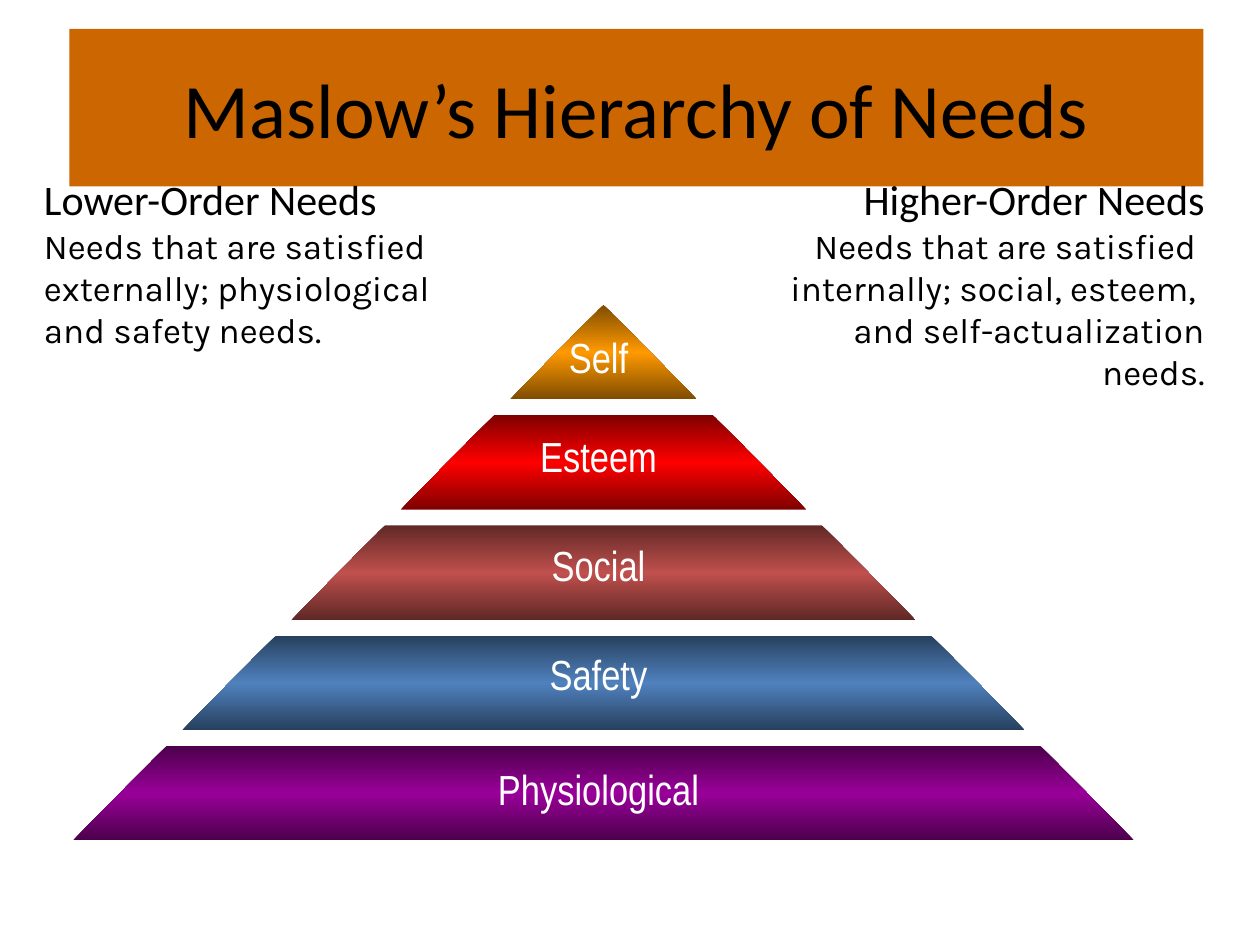
from copy import deepcopy
from dataclasses import dataclass

from pptx import Presentation
from pptx.dml.color import RGBColor
from pptx.enum.text import MSO_ANCHOR, MSO_AUTO_SIZE, PP_ALIGN
from pptx.oxml.ns import qn
from pptx.util import Inches, Pt

LEFT, CENTER, RIGHT = PP_ALIGN.LEFT, PP_ALIGN.CENTER, PP_ALIGN.RIGHT
MIDDLE = MSO_ANCHOR.MIDDLE
NO_FIT, GROW = MSO_AUTO_SIZE.NONE, MSO_AUTO_SIZE.SHAPE_TO_FIT_TEXT


@dataclass(frozen=True)
class Theme:
    banner: str = "CC6600"
    ink: str = "000000"
    label: str = "FFFFFF"
    tiers: tuple = ("FF9900", "FF0000", "C0504D", "4F81BD", "990099")
    main_font: str = "Calibri"
    note_font: str = "Karla"
    label_font: str = "Arial Narrow"
    title_size: int = 44
    heading_size: int = 24
    note_size: int = 20


THEME = Theme()

# Need and line spacing of its label, from the top tier down
NEEDS = [("Self", 1), ("Esteem", 1.8), ("Social", 2), ("Safety", 2), ("Physiological", 2.1)]
LOWER = ("Lower-Order Needs\nNeeds that are satisfied externally; physiological \n"
         "and safety needs.")
HIGHER = ("Higher-Order Needs\nNeeds that are satisfied \ninternally; social, esteem, \n"
          "and self-actualization\n needs.")


def place(shape, box):
    shape.left, shape.top, shape.width, shape.height = map(Inches, box)


def style(r, font, size, color):
    r.font.name, r.font.size = font, Pt(size)
    r.font.color.rgb = RGBColor.from_string(color)


def add_title(s, box, text):
    title = s.shapes.title
    place(title, box)
    title.fill.solid()
    title.fill.fore_color.rgb = RGBColor.from_string(THEME.banner)
    tf = title.text_frame
    tf.text = text
    tf.vertical_anchor, tf.auto_size = MIDDLE, NO_FIT
    p = tf.paragraphs[0]
    p.alignment = CENTER
    style(p.runs[0], THEME.main_font, THEME.title_size, THEME.ink)


def add_note(s, box, text, align):
    """Heading on the first line, explanation on the lines below."""
    tf = s.shapes.add_textbox(*map(Inches, box)).text_frame
    tf.word_wrap, tf.auto_size = True, GROW
    p = tf.paragraphs[0]
    p.text = text
    p.alignment = align
    heading, *lines = p.runs
    style(heading, THEME.main_font, THEME.heading_size, THEME.ink)
    for r in lines:
        style(r, THEME.note_font, THEME.note_size, THEME.ink)


def shade_tier(sp, color):
    """Vertical gradient from half brightness to full and back."""
    bright = RGBColor.from_string(color)
    dark = RGBColor(*(c // 2 for c in bright))
    sp.fill.gradient()
    sp.fill.gradient_angle = 90
    stop_list = sp._element.spPr.find(qn("a:gradFill")).find(qn("a:gsLst"))
    stop_list.append(deepcopy(stop_list[0]))
    stops = zip(sp.fill.gradient_stops, (0, 0.5, 1), (dark, bright, dark))
    for stop, position, rgb in stops:
        stop.position = position
        stop.color.rgb = rgb


def add_pyramid(s, box, gap=0.125):
    """One triangle cut into equally high tiers."""
    left, top, width, height = box
    middle, slope = left + width / 2, width / 2 / height
    count = len(THEME.tiers)
    tier_h = (height - gap * (count - 1)) / count
    group = s.shapes.add_group_shape()
    for i, color in enumerate(THEME.tiers):
        y1 = i * (tier_h + gap)
        y2 = y1 + tier_h
        corners = [(-slope * y1, y1), (slope * y1, y1), (slope * y2, y2), (-slope * y2, y2)]
        points = [(Inches(middle + x), Inches(top + y)) for x, y in corners]
        builder = group.shapes.build_freeform(*points[0])
        builder.add_line_segments(dict.fromkeys(points[1:]), close=True)
        sp = builder.convert_to_shape()
        sp.shadow.inherit = False
        sp.line.fill.background()
        shade_tier(sp, color)


def add_labels(s, box):
    body = s.placeholders[1]
    place(body, box)
    tf = body.text_frame
    tf.text = "\n".join(name for name, _ in NEEDS)
    tf.auto_size = NO_FIT
    for p, (_, spacing) in zip(tf.paragraphs, NEEDS):
        p.alignment, p.line_spacing = CENTER, float(spacing)
        p._p.get_or_add_pPr().append(p._p.makeelement(qn("a:buNone"), {}))
        style(p.runs[0], THEME.label_font, THEME.heading_size, THEME.label)
    # The labels lie in front of the tiers
    s.shapes._spTree.append(body._element)


def main():
    prs = Presentation()
    prs.slide_width, prs.slide_height = Inches(10), Inches(7.5)
    s = prs.slides.add_slide(prs.slide_layouts[1])
    add_title(s, (0.55, 0.23, 9, 1.25), "Maslow’s Hierarchy of Needs")
    add_note(s, (0.25, 1.33, 3.92, 1.5), LOWER, LEFT)
    add_note(s, (5.58, 1.33, 4.08, 1.83), HIGHER, RIGHT)
    add_pyramid(s, (0.58, 2.42, 8.42, 4.25))
    add_labels(s, (0.5, 2.58, 8.5, 4.5))
    prs.save("out.pptx")


if __name__ == "__main__":
    main()
